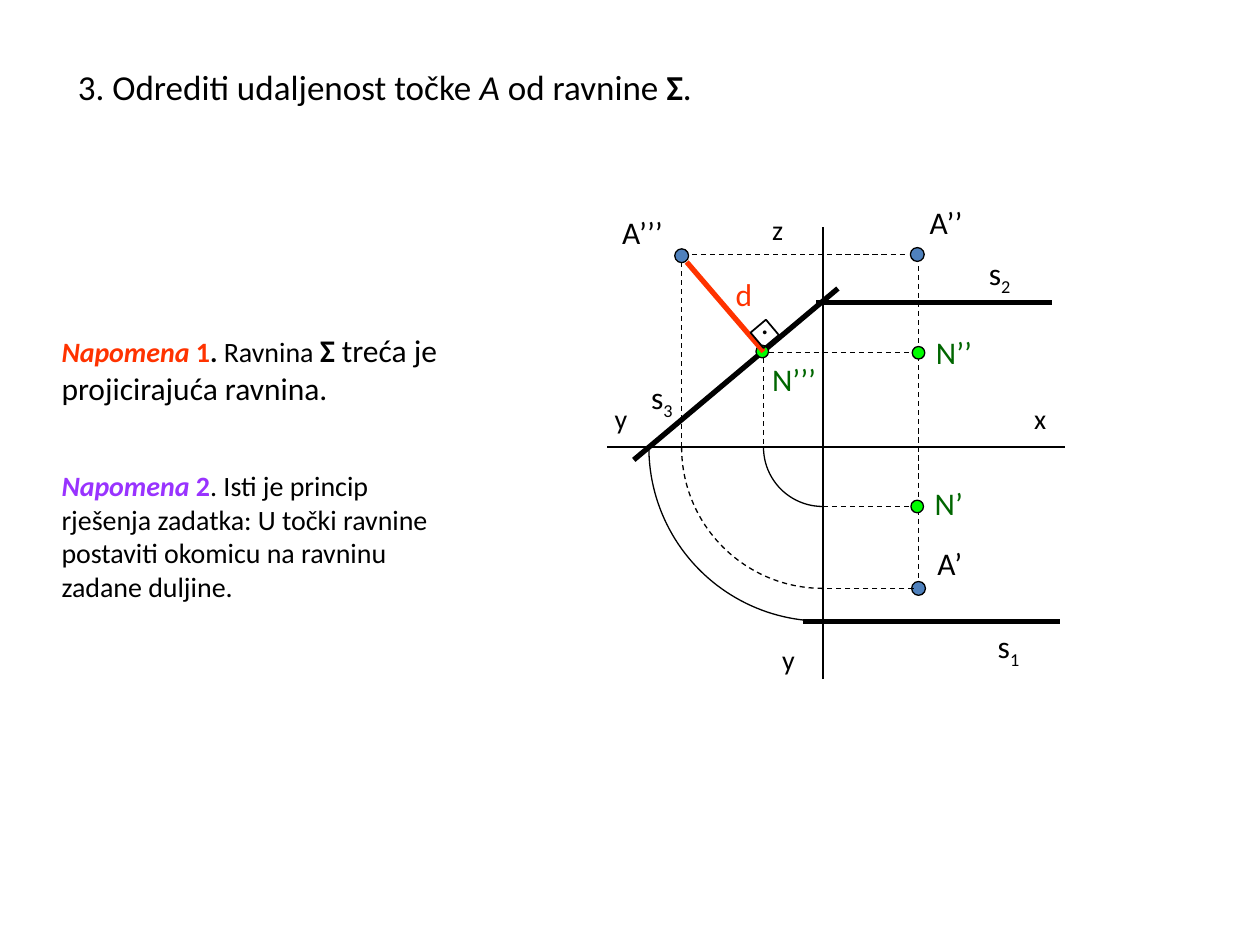
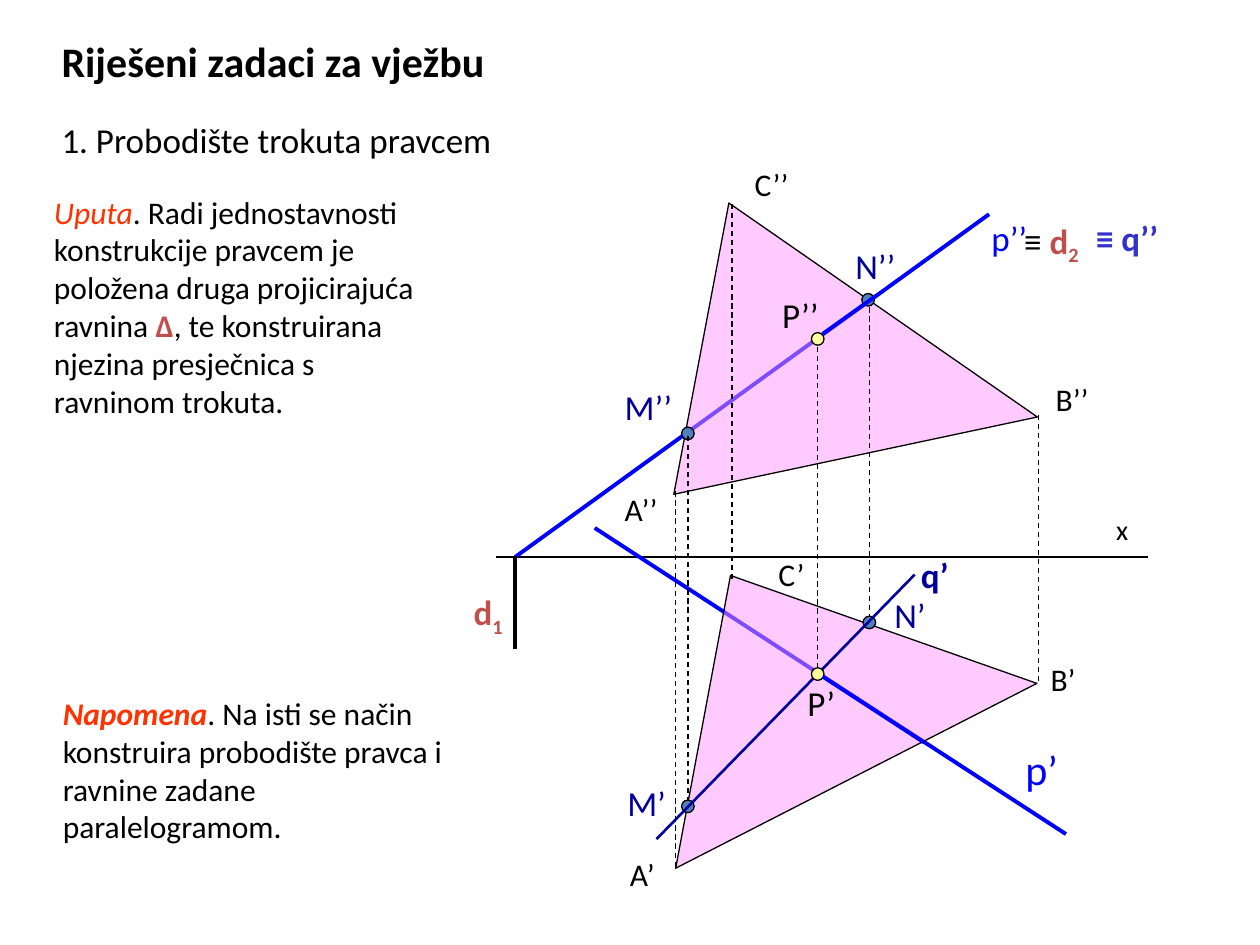
from dataclasses import dataclass

from lxml import etree
from pptx import Presentation
from pptx import util as u
from pptx.dml.color import RGBColor
from pptx.enum import dml, shapes, text
from pptx.oxml.ns import qn

FONT = "Calibri"
BLACK, RED, GREEN, BRICK = "000000", "FF3300", "006600", "C0504D"
BLUE, NAVY, INDIGO, VIOLET = "0000FF", "000099", "3333CC", "9933FF"
STEEL, LIME, YELLOW, PINK = "4F81BD", "00FF00", "FFFF99", "FF99FF"
THIN = 0.75
ORIGIN = (6.53, 3.55)


@dataclass
class Span:
    words: str
    color: str = ""
    size: float = 0
    bold: bool = False
    italic: bool = False
    lowered: bool = False


@dataclass
class Label:
    left: float
    top: float
    width: float
    size: float
    color: str
    spans: list[Span]
    rows: int = 1


@dataclass
class Line:
    start: tuple[float, float]
    end: tuple[float, float]
    color: str = BLACK
    width: float = THIN
    dashed: bool = False


@dataclass
class Dot:
    x: float
    y: float
    color: str
    size: float = 0.1


@dataclass
class QuarterArc:
    center: tuple[float, float]
    radius: float
    dashed: bool = False


@dataclass
class Outline:
    kind: shapes.MSO_SHAPE
    frame: tuple[float, float, float, float]
    turn: float
    fill: str = ""
    apex: float = 0
    width: float = THIN


def rgb(color: str) -> RGBColor:
    return RGBColor.from_string(color)


def set_format(target, values: dict) -> None:
    for name, value in values.items():
        setattr(target, name, value)


def style_line(line, color: str, width: float, dashed: bool = False) -> None:
    line.color.rgb = rgb(color)
    line.width = u.Pt(width)
    if dashed:
        line.dash_style = dml.MSO_LINE.DASH


def add_outline(page, kind, frame: tuple, fill: str, width: float, dashed: bool = False):
    shape = page.shapes.add_shape(kind, *map(u.Inches, frame))
    shape.shadow.inherit = False
    if fill:
        shape.fill.solid()
        shape.fill.fore_color.rgb = rgb(fill)
    else:
        shape.fill.background()
    style_line(shape.line, BLACK, width, dashed)
    return shape


def draw_label(page, label: Label) -> None:
    height = label.rows * label.size * 1.2 / 72 + 0.1
    box = page.shapes.add_textbox(*map(u.Inches, (label.left, label.top, label.width, height)))
    set_format(box.text_frame, {"word_wrap": True, "auto_size": text.MSO_AUTO_SIZE.SHAPE_TO_FIT_TEXT})
    para = box.text_frame.paragraphs[0]
    for part in label.spans:
        span = para.add_run()
        span.text = part.words
        set_format(span.font, {
            "name": FONT,
            "size": u.Pt(part.size or label.size),
            "bold": part.bold,
            "italic": part.italic,
        })
        span.font.color.rgb = rgb(part.color or label.color)
        if part.lowered:
            span.font._element.set("baseline", "-25000")


def draw_line(page, line: Line) -> None:
    connector = page.shapes.add_connector(
        shapes.MSO_CONNECTOR.STRAIGHT, *map(u.Inches, line.start + line.end))
    style_line(connector.line, line.color, line.width, line.dashed)
    etree.SubElement(connector._element.spPr, qn("a:effectLst"))


def draw_dot(page, dot: Dot) -> None:
    frame = (dot.x - dot.size / 2, dot.y - dot.size / 2, dot.size, dot.size)
    add_outline(page, shapes.MSO_SHAPE.OVAL, frame, dot.color, THIN)


def draw_arc(page, arc: QuarterArc) -> None:
    x, y = arc.center
    frame = (x - arc.radius, y - arc.radius, 2 * arc.radius, 2 * arc.radius)
    shape = add_outline(page, shapes.MSO_SHAPE.ARC, frame, "", THIN, arc.dashed)
    shape.adjustments[0], shape.adjustments[1] = 54, 108


def draw_outline(page, outline: Outline) -> None:
    shape = add_outline(page, outline.kind, outline.frame, outline.fill, outline.width)
    shape.rotation = outline.turn
    if outline.apex:
        shape.adjustments[0] = outline.apex
    if outline.fill:
        tint = shape._element.spPr.find(qn("a:solidFill")).find(qn("a:srgbClr"))
        etree.SubElement(tint, qn("a:alpha")).set("val", "50000")


DRAW = {Label: draw_label, Line: draw_line, Dot: draw_dot, QuarterArc: draw_arc, Outline: draw_outline}


def name(words: str, left: float, top: float, width: float, size: float = 18,
         color: str = BLACK, index: str = "", bold: bool = False) -> Label:
    spans = [Span(words, bold=bold)]
    if index:
        spans.append(Span(index, bold=bold, lowered=True))
    return Label(left, top, width, size, color, spans)


def guide(start: tuple[float, float], end: tuple[float, float]) -> Line:
    return Line(start, end, dashed=True)


def triangle(frame: tuple[float, float, float, float], turn: float, apex: float) -> Outline:
    return Outline(shapes.MSO_SHAPE.ISOSCELES_TRIANGLE, frame, turn, PINK, apex)


DISTANCE = [
    Line((4.82, 3.55), (8.45, 3.55), width=1),
    Line((6.53, 5.39), (6.53, 1.8), width=1),
    name("x", 8.11, 3.14, 0.58, 16),
    name("y", 6.11, 5.05, 0.5, 16),
    name("y", 4.78, 3.14, 0.5, 16),
    name("z", 6.03, 1.64, 0.5, 16),
    Label(0.52, 0.47, 5.73, 20, BLACK, [
        Span("3. Odrediti udaljenost točke "), Span("A", italic=True),
        Span(" od ravnine "), Span("Σ", bold=True), Span(".")]),
    Line((6.48, 2.4), (8.35, 2.4), width=3),
    Line((6.37, 4.93), (8.41, 4.93), width=3),
    name("s", 7.75, 1.97, 0.72, index="2"),
    name("s", 7.82, 4.93, 0.61, index="1"),
    guide((7.29, 2.11), (7.29, 4.64)),
    Dot(7.28, 2.02, STEEL, 0.11),
    Dot(7.29, 4.67, STEEL, 0.11),
    name("A’’", 7.28, 1.56, 0.58),
    name("A’", 7.34, 4.27, 0.52),
    QuarterArc(ORIGIN, 1.38),
    Line((5.03, 3.65), (6.65, 2.29), width=3),
    name("s", 5.07, 2.95, 0.44, index="3"),
    guide((7.25, 4.67), (6.52, 4.67)),
    QuarterArc(ORIGIN, 1.12, dashed=True),
    guide((5.42, 2.02), (7.21, 2.02)),
    guide((5.41, 3.55), (5.41, 2.03)),
    Dot(5.41, 2.03, STEEL, 0.11),
    name("A’’’", 4.84, 1.64, 0.77),
    Dot(6.05, 2.79, LIME),
    name("N’’’", 6.03, 2.81, 0.67, color=GREEN),
    guide((6.1, 2.8), (7.27, 2.8)),
    Dot(7.29, 2.8, LIME),
    name("N’’", 7.33, 2.59, 0.61, color=GREEN),
    guide((6.06, 2.84), (6.06, 3.56)),
    QuarterArc(ORIGIN, 0.47),
    guide((6.53, 4.02), (7.29, 4.02)),
    Dot(7.28, 4.02, LIME),
    name("N’", 7.32, 3.79, 0.61, color=GREEN),
    Label(0.39, 2.58, 3.44, 16, BLACK, [
        Span("Napomena ", RED, bold=True, italic=True), Span("1", RED, bold=True),
        Span(".", bold=True), Span(" Ravnina "), Span("Σ", size=18, bold=True),
        Span(" treća je projicirajuća ravnina.", size=18)], rows=2),
    Label(0.39, 3.67, 3.33, 16, BLACK, [
        Span("Napomena ", VIOLET, bold=True, italic=True), Span("2", VIOLET, bold=True),
        Span(". Isti je princip rješenja zadatka: U točki ravnine postaviti "
             "okomicu na ravninu zadane duljine.")], rows=4),
    Line((5.45, 2.08), (6.06, 2.79), RED, 3),
    name("d", 5.74, 2.13, 0.43, color=RED),
    Outline(shapes.MSO_SHAPE.RECTANGLE, (5.99, 2.57, 0.16, 0.16), 319.9, width=1),
    name(".", 5.94, 2.36, 0.2),
]

PIERCING = [
    name("1. Probodište trokuta pravcem", 0.39, 0.89, 4.3, 20),
    Line((3.94, 4.42), (9.11, 4.42), width=1.5),
    Line((4.09, 4.42), (7.85, 1.7), BLUE, 2.25),
    Line((4.72, 4.19), (8.46, 6.62), BLUE, 2.25),
    name("p’’", 7.77, 1.67, 0.76, 20, BLUE),
    name("p’", 8.04, 5.85, 0.69, 24, BLUE),
    name("x", 8.76, 4.02, 0.4, 16),
    triangle((5.09, 1.47, 2.95, 2.17), 348, 0.308),
    triangle((4.76, 4.39, 3.22, 1.87), 332.9, 0.449),
    guide((5.36, 3.9), (5.36, 6.89)),
    guide((5.81, 1.62), (5.81, 4.6)),
    guide((8.24, 3.29), (8.24, 5.43)),
    name("A’", 4.9, 6.74, 0.51),
    name("B’", 8.24, 5.19, 0.56),
    name("C’", 6.08, 4.36, 0.65),
    name("A’’", 4.86, 3.84, 0.67),
    name("B’’", 8.28, 2.97, 0.65),
    name("C’’", 5.89, 1.26, 0.72),
    Label(0.33, 1.48, 3.13, 18, BLACK, [
        Span("Uputa", RED, italic=True),
        Span(". Radi jednostavnosti konstrukcije pravcem je položena druga "
             "projicirajuća ravnina "),
        Span("Δ", BRICK, bold=True),
        Span(", te konstruirana njezina presječnica s ravninom trokuta.")], rows=6),
    Label(8.03, 1.69, 1, 20, BRICK, [
        Span("≡ ", BLACK), Span("d", bold=True), Span("2", bold=True, lowered=True)]),
    Line((4.09, 4.41), (4.09, 5.15), width=2.25),
    name("d", 3.66, 4.64, 0.72, 20, BRICK, "1", bold=True),
    name("≡ q’’", 8.6, 1.67, 0.85, 20, INDIGO, bold=True),
    Dot(6.89, 2.38, STEEL),
    Dot(5.46, 3.44, STEEL),
    name("M’’", 4.86, 3.01, 0.69, 20, NAVY),
    name("N’’", 6.69, 1.89, 0.74, 20, NAVY),
    guide((5.46, 3.46), (5.46, 6.4)),
    guide((6.9, 2.44), (6.9, 4.94)),
    Dot(6.9, 4.94, STEEL),
    Dot(5.46, 6.4, STEEL),
    name("M’", 4.88, 6.15, 0.61, 20, NAVY),
    name("N’", 7, 4.66, 0.51, 20, NAVY),
    Line((5.21, 6.66), (7.26, 4.56), NAVY, 1.5),
    name("q’", 7.21, 4.34, 0.48, 20, NAVY, bold=True),
    Dot(6.49, 5.35, YELLOW),
    name("P’", 6.31, 5.36, 0.46, 20),
    guide((6.49, 5.3), (6.49, 2.69)),
    Dot(6.49, 2.69, YELLOW),
    name("P’’", 6.11, 2.28, 0.65, 20),
    Line((6.95, 2.35), (6.53, 2.65), BLUE, 2.25),
    Line((6.53, 5.37), (7.33, 5.89), BLUE, 2.25),
    Label(0.4, 5.46, 3.27, 18, BLACK, [
        Span("Napomena", RED, bold=True, italic=True),
        Span(". Na isti se način konstruira probodište pravca i ravnine zadane "
             "paralelogramom.")], rows=4),
    name("Riješeni zadaci za vježbu", 0.39, 0.23, 4.69, 24, bold=True),
]


def main() -> None:
    deck = Presentation()
    set_format(deck, {"slide_width": u.Inches(10), "slide_height": u.Inches(7.5)})
    for parts in (DISTANCE, PIERCING):
        page = deck.slides.add_slide(deck.slide_layouts[6])
        for part in parts:
            DRAW[type(part)](page, part)
    deck.save("out.pptx")


if __name__ == "__main__":
    main()
